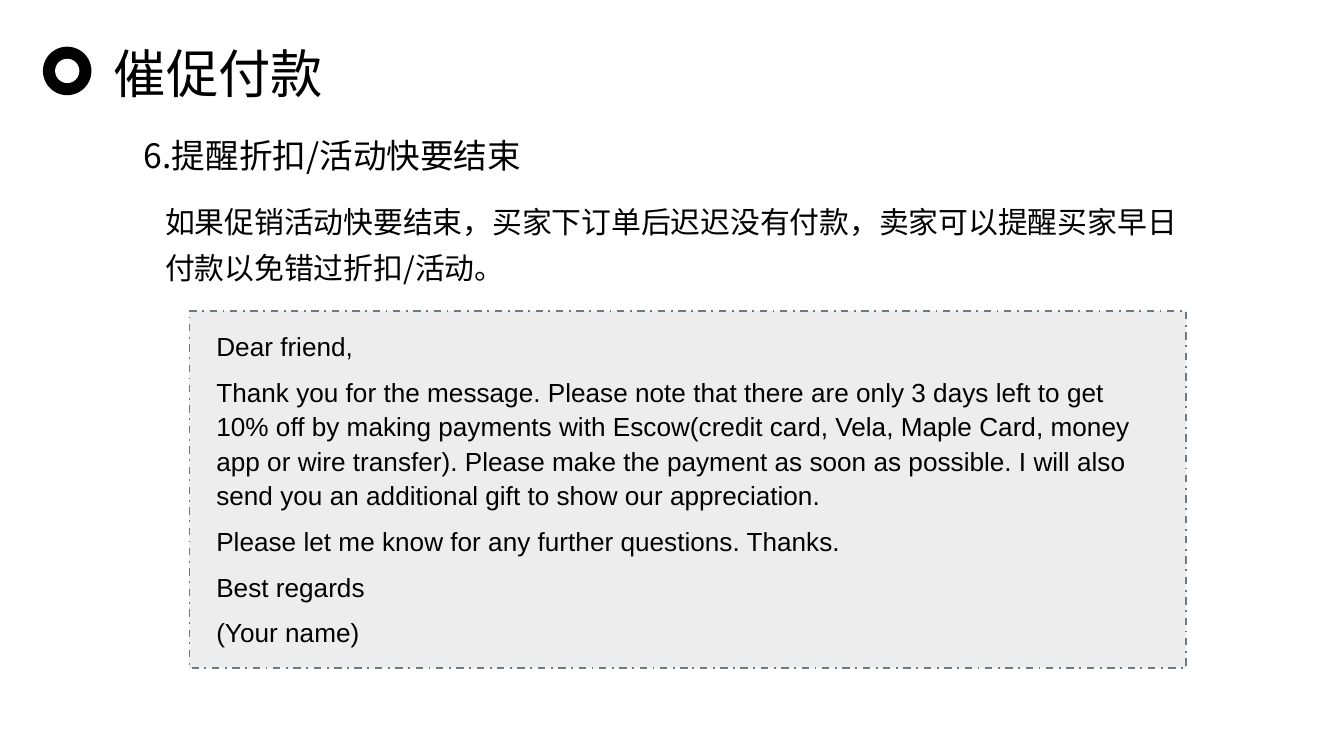
from lxml import etree
from pptx import Presentation
from pptx.dml.color import RGBColor
from pptx.enum import dml, lang, shapes, text
from pptx.oxml.ns import qn
from pptx.util import Pt

BLACK = RGBColor(0, 0, 0)
WHITE = RGBColor(255, 255, 255)
PALE = RGBColor(0xEE, 0xED, 0xED)
SLATE = RGBColor(0x6D, 0x7A, 0x84)
HAN = "Noto Sans CJK SC"
LATIN = "Arial"

TITLE = "催促付款"
HEAD = "6.提醒折扣/活动快要结束"
INTRO = "如果促销活动快要结束，买家下订单后迟迟没有付款，卖家可以提醒买家早日付款以免错过折扣/活动。"
LETTER = [
    "Dear friend,",
    "Thank you for the message. Please note that there are only 3 days left "
    "to get 10% off by making payments with Escow(credit card, Vela, "
    "Maple Card, money app or wire transfer). Please make the payment as "
    "soon as possible. I will also send you an additional gift to show our "
    "appreciation.",
    "Please let me know for any further questions. Thanks.",
    "Best regards",
    "(Your name)",
]


def add_shape(slide, kind, box, fill, line=None):
    """Draw a filled preset shape, with a dash-dot outline if a line colour is given."""
    shape = slide.shapes.add_shape(kind, *map(Pt, box))
    shape.shadow.inherit = False
    shape.fill.solid()
    shape.fill.fore_color.rgb = fill
    if line is None:
        shape.line.fill.background()
    else:
        shape.line.color.rgb = line
        shape.line.width = Pt(1)
        shape.line.dash_style = dml.MSO_LINE.DASH_DOT


def add_ring(slide, x, y, size, hole):
    """Draw a black disc with a white disc centred on it."""
    gap = (size - hole) / 2
    oval = shapes.MSO_SHAPE.OVAL
    add_shape(slide, oval, (x, y, size, size), BLACK)
    add_shape(slide, oval, (x + gap, y + gap, hole, hole), WHITE)


def add_text(slide, box, lines, size, font, space=1.0, gap=0, pad=(6.5, 3.25), wrap=True):
    """Write paragraphs in one font, with a gap between them."""
    frame = slide.shapes.add_textbox(*map(Pt, box)).text_frame
    frame.word_wrap = wrap
    frame.auto_size = text.MSO_AUTO_SIZE.SHAPE_TO_FIT_TEXT
    frame.margin_left = frame.margin_right = Pt(pad[0])
    frame.margin_top = frame.margin_bottom = Pt(pad[1])
    frame.text = "\n".join(lines)
    for n, para in enumerate(frame.paragraphs):
        para.line_spacing = space
        if n:
            para.space_before = Pt(gap)
        for run in para.runs:
            run.font.size = Pt(size)
            run.font.color.rgb = BLACK
            run.font.name = font
            if font == HAN:
                run.font.language_id = lang.MSO_LANGUAGE_ID.SIMPLIFIED_CHINESE
            east = etree.SubElement(run.font._element, qn("a:ea"))
            east.set("typeface", font)


def main():
    """Build the payment reminder slide and save it."""
    deck = Presentation()
    deck.slide_width, deck.slide_height = Pt(720), Pt(405)
    slide = deck.slides.add_slide(deck.slide_layouts[6])
    add_ring(slide, 23, 25, 26, 13)
    add_text(slide, (54, 18.7, 126.7, 41), [TITLE], 28, HAN, pad=(7.2, 3.6), wrap=False)
    add_shape(slide, shapes.MSO_SHAPE.RECTANGLE, (101.5, 166.5, 534, 191.5), PALE, SLATE)
    add_text(slide, (109.4, 172, 519, 180), LETTER, 14, LATIN, 1.1, 6)
    add_text(slide, (70.6, 62.6, 264, 34.6), [HEAD], 18, HAN, 1.3)
    add_text(slide, (82, 100, 568, 57), [INTRO], 16, HAN, 1.3)
    deck.save("out.pptx")


if __name__ == "__main__":
    main()
